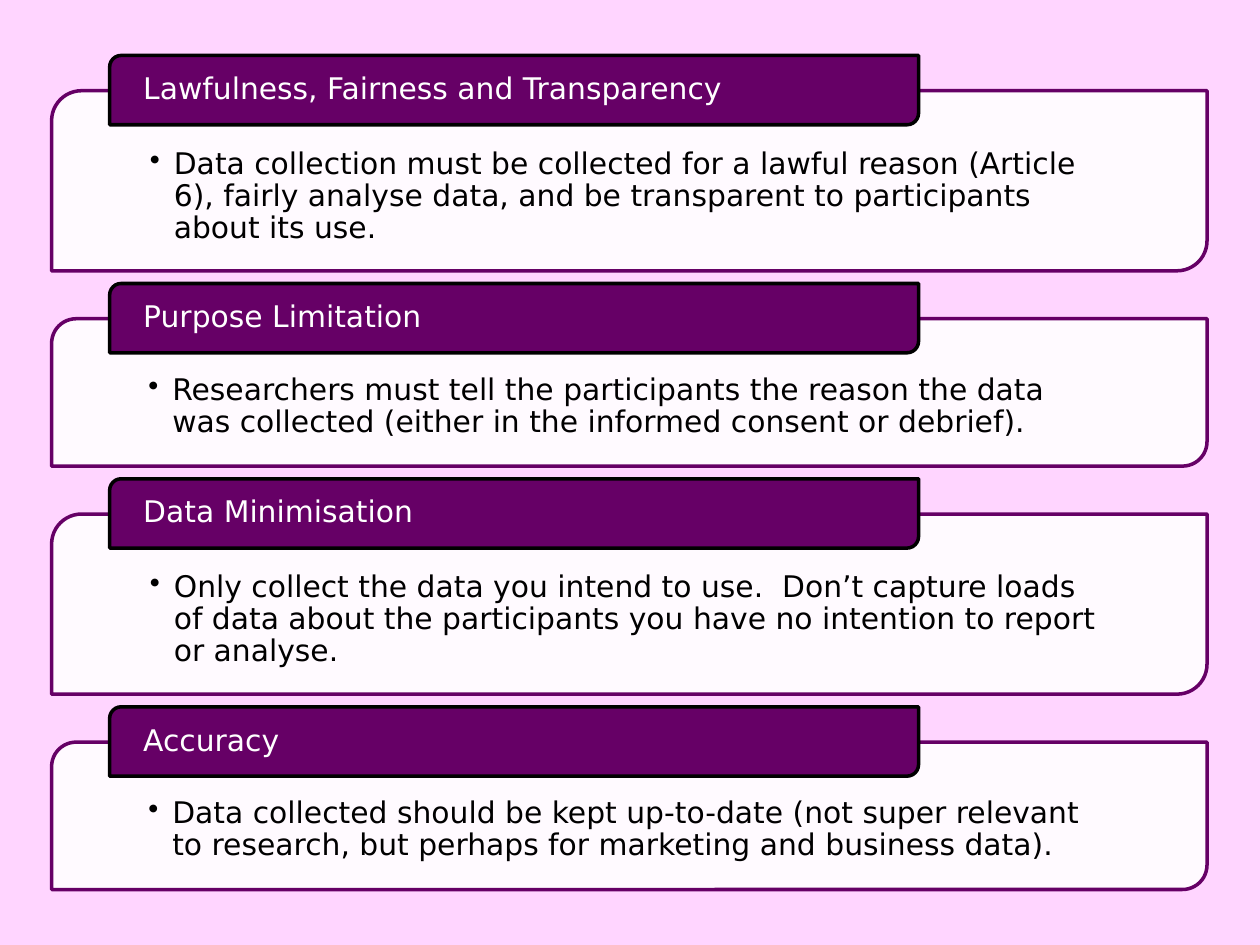
"""Build a slide of four data protection principles as titled cards."""
from lxml import etree
from pptx import Presentation
from pptx.dml.color import RGBColor
from pptx.enum.shapes import MSO_SHAPE
from pptx.enum.text import MSO_ANCHOR, PP_ALIGN
from pptx.oxml.ns import qn
from pptx.util import Inches, Pt

CARD_SHAPE = MSO_SHAPE.ROUND_2_DIAG_RECTANGLE
TOP, MIDDLE = MSO_ANCHOR.TOP, MSO_ANCHOR.MIDDLE
LEFT = PP_ALIGN.LEFT

COLORS = {
    "background": "FFD5FF",
    "purple": "660066",
    "white": "FFFFFF",
    "black": "000000",
}
FONT = "DejaVu Sans"
INSET_RATIO = 0.049
HEADER_HEIGHT = 0.55
HEADER_OVERLAP = 0.28
GAP = 0.1

PRINCIPLES = [
    ("Lawfulness, Fairness and Transparency", 1.43,
     "Data collection must be collected for a lawful reason (Article 6), fairly "
     "analyse data, and be transparent to participants about its use."),
    ("Purpose Limitation", 1.17,
     "Researchers must tell the participants the reason the data was collected "
     "(either in the informed consent or debrief)."),
    ("Data Minimisation", 1.43,
     "Only collect the data you intend to use.  Don’t capture loads of data about "
     "the participants you have no intention to report or analyse."),
    ("Accuracy", 1.17,
     "Data collected should be kept up-to-date (not super relevant to research, "
     "but perhaps for marketing and business data)."),
]

presentation = Presentation()
presentation.slide_width = Inches(10)
presentation.slide_height = Inches(7.5)
slide = presentation.slides.add_slide(presentation.slide_layouts[6])
slide.background.fill.solid()
slide.background.fill.fore_color.rgb = RGBColor.from_string(COLORS["background"])


def add_panel(left, top, width, height, fill, line, opacity=100):
    shape = slide.shapes.add_shape(
        CARD_SHAPE, Inches(left), Inches(top), Inches(width), Inches(height))
    shape.shadow.inherit = False
    shape.fill.solid()
    shape.fill.fore_color.rgb = RGBColor.from_string(COLORS[fill])
    shape.line.color.rgb = RGBColor.from_string(COLORS[line])
    shape.line.width = Pt(2)
    if opacity < 100:
        color = shape.fill._xPr.find(qn("a:solidFill"))[0]
        etree.SubElement(color, qn("a:alpha"), val=str(opacity * 1000))


def add_text(text, left, top, width, height, color, margins, anchor=TOP, bullet=False):
    inset = INSET_RATIO * height
    box = slide.shapes.add_textbox(
        Inches(left + inset), Inches(top + inset),
        Inches(width - 2 * inset), Inches(height - 2 * inset))
    frame = box.text_frame
    frame.word_wrap = True
    frame.vertical_anchor = anchor
    side, above, below = margins
    frame.margin_left = frame.margin_right = Inches(side)
    frame.margin_top, frame.margin_bottom = Inches(above), Inches(below)
    paragraph = frame.paragraphs[0]
    if bullet:
        paragraph.level = 1
        properties = paragraph._p.get_or_add_pPr()
        properties.set("marL", str(Inches(0.19)))
        properties.set("indent", str(Inches(-0.19)))
        etree.SubElement(properties, qn("a:buChar"), char="•")
    paragraph.alignment = LEFT
    paragraph.line_spacing = 0.9
    run = paragraph.add_run()
    run.text = text
    run.font.name = FONT
    run.font.size = Pt(17)
    run.font.color.rgb = RGBColor.from_string(COLORS[color])


header_top = 0.44
for title, card_height, description in PRINCIPLES:
    card_top = header_top + HEADER_OVERLAP
    card = (0.41, card_top, 9.17, card_height)
    header = (0.87, header_top, 6.42, HEADER_HEIGHT)
    add_panel(*card, fill="white", line="purple", opacity=90)
    add_text(description, *card, color="black", margins=(0.71, 0.39, 0.13), bullet=True)
    add_panel(*header, fill="purple", line="black")
    add_text(title, *header, color="white", margins=(0.24, 0, 0), anchor=MIDDLE)
    header_top = card_top + card_height + GAP

presentation.save("out.pptx")
